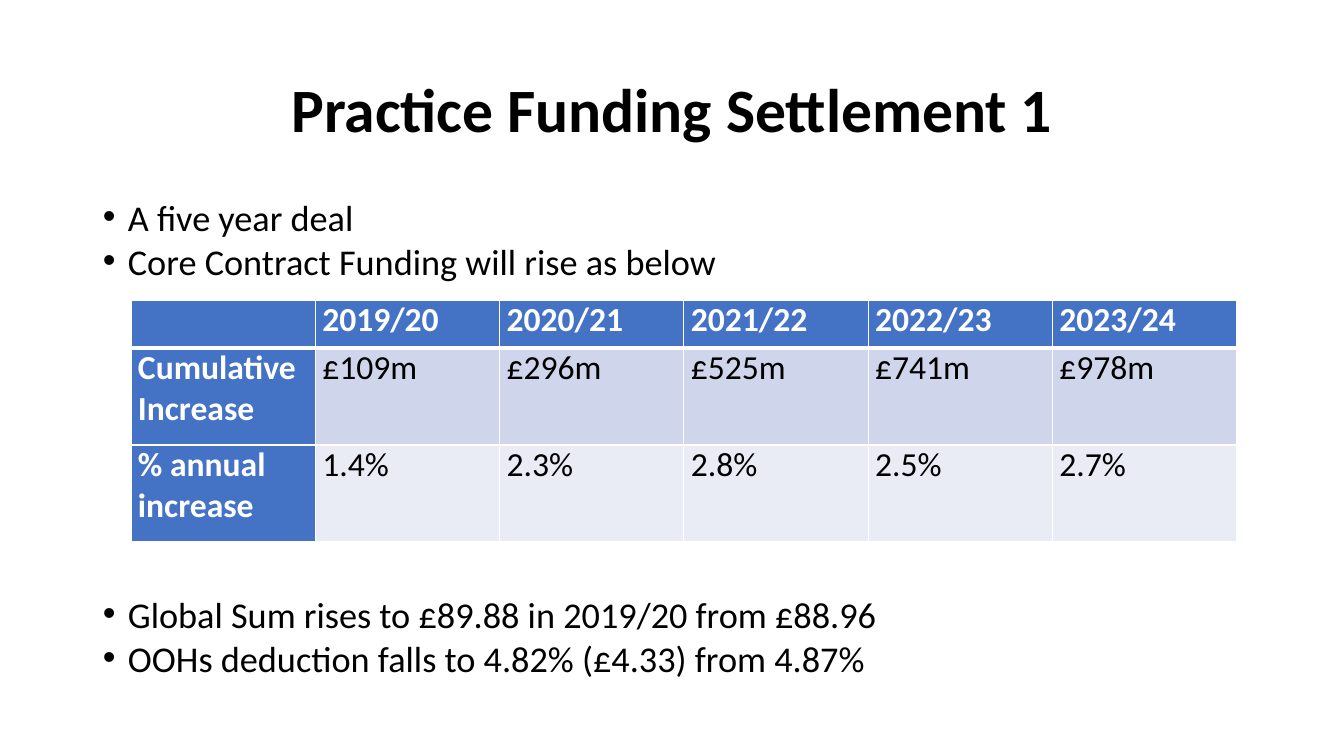
"""Build the practice funding settlement slide."""
from lxml import etree
from pptx import Presentation
from pptx.dml.color import RGBColor
from pptx.enum.text import MSO_ANCHOR, PP_ALIGN
from pptx.oxml.ns import qn
from pptx.util import Pt

EMU_PER_PX = 12192000 / 1344
CENTER, LEFT = PP_ALIGN.CENTER, PP_ALIGN.LEFT
MIDDLE, TOP = MSO_ANCHOR.MIDDLE, MSO_ANCHOR.TOP
BLUE, WHITE, BLACK = "4472C4", "FFFFFF", "000000"
BAND_FILLS = ["CFD5EA", "E9EBF5"]

TITLE = "Practice Funding Settlement 1"
BULLETS = [
    ("A five year deal", 10),
    ("Core Contract Funding will rise as below", 10),
    ("Global Sum rises to £89.88 in 2019/20 from £88.96", 230),
    ("OOHs deduction falls to 4.82% (£4.33) from 4.87%", 10),
]
FUNDING = [
    ["", "2019/20", "2020/21", "2021/22", "2022/23", "2023/24"],
    ["Cumulative\nIncrease", "£109m", "£296m", "£525m", "£741m", "£978m"],
    ["% annual increase", "1.4%", "2.3%", "2.8%", "2.5%", "2.7%"],
]
ROW_HEIGHTS = [48, 97, 97]


def px(length):
    return round(length * EMU_PER_PX)


def style_font(font, size, color, bold=False):
    for name, value in {"name": "Calibri", "size": Pt(size), "bold": bold}.items():
        setattr(font, name, value)
    font.color.rgb = RGBColor.from_string(color)


deck = Presentation()
deck.slide_width, deck.slide_height = px(1344), px(756)
page = deck.slides.add_slide(deck.slide_layouts[6])

title_box = page.shapes.add_textbox(px(93), px(40), px(1159), px(146))
title_frame = title_box.text_frame
title_frame.word_wrap = True
title_frame.vertical_anchor = MIDDLE
title_para = title_frame.paragraphs[0]
title_para.text = TITLE
title_para.alignment = CENTER
title_para.line_spacing = 0.9
style_font(title_para.runs[0].font, 44, BLACK, True)

body_box = page.shapes.add_textbox(px(93), px(202), px(1182), px(502))
body_frame = body_box.text_frame
body_frame.word_wrap = True
body_frame.vertical_anchor = TOP
for index, (text, gap) in enumerate(BULLETS):
    para = body_frame.add_paragraph() if index else body_frame.paragraphs[0]
    para.text = text
    para.alignment = LEFT
    para.line_spacing = 0.7
    para.space_before = Pt(gap)
    style_font(para.runs[0].font, 25.9, BLACK)
    properties = para._p.get_or_add_pPr()
    properties.set("marL", str(px(25)))
    properties.set("indent", str(px(-25)))
    etree.SubElement(properties, qn("a:buFont"), typeface="Arial")
    etree.SubElement(properties, qn("a:buChar"), char="•")

table_frame = page.shapes.add_table(
    len(FUNDING), len(FUNDING[0]), px(131), px(300), px(1106), px(sum(ROW_HEIGHTS)))
table = table_frame.table
for row, height in zip(table.rows, ROW_HEIGHTS):
    row.height = px(height)

for row_index, values in enumerate(FUNDING):
    for column_index, value in enumerate(values):
        cell = table.cell(row_index, column_index)
        is_heading = row_index == 0 or column_index == 0
        margins = {"margin_left": 7, "margin_right": 7, "margin_top": 0, "margin_bottom": 0}
        for name, margin in margins.items():
            setattr(cell, name, px(margin))

        widths = {"lnL": 1, "lnR": 1, "lnT": 3 if row_index == 1 else 1,
                  "lnB": 3 if row_index == 0 else 1}
        for side, width in widths.items():
            border = etree.SubElement(
                cell._tc.get_or_add_tcPr(), qn(f"a:{side}"), w=str(Pt(width)))
            line_fill = etree.SubElement(border, qn("a:solidFill"))
            etree.SubElement(line_fill, qn("a:srgbClr"), val=WHITE)

        cell.fill.solid()
        cell.fill.fore_color.rgb = RGBColor.from_string(
            BLUE if is_heading else BAND_FILLS[row_index - 1])
        cell.text = value
        for para in cell.text_frame.paragraphs:
            for span in para.runs:
                style_font(span.font, 24, WHITE if is_heading else BLACK, is_heading)

deck.save("out.pptx")
